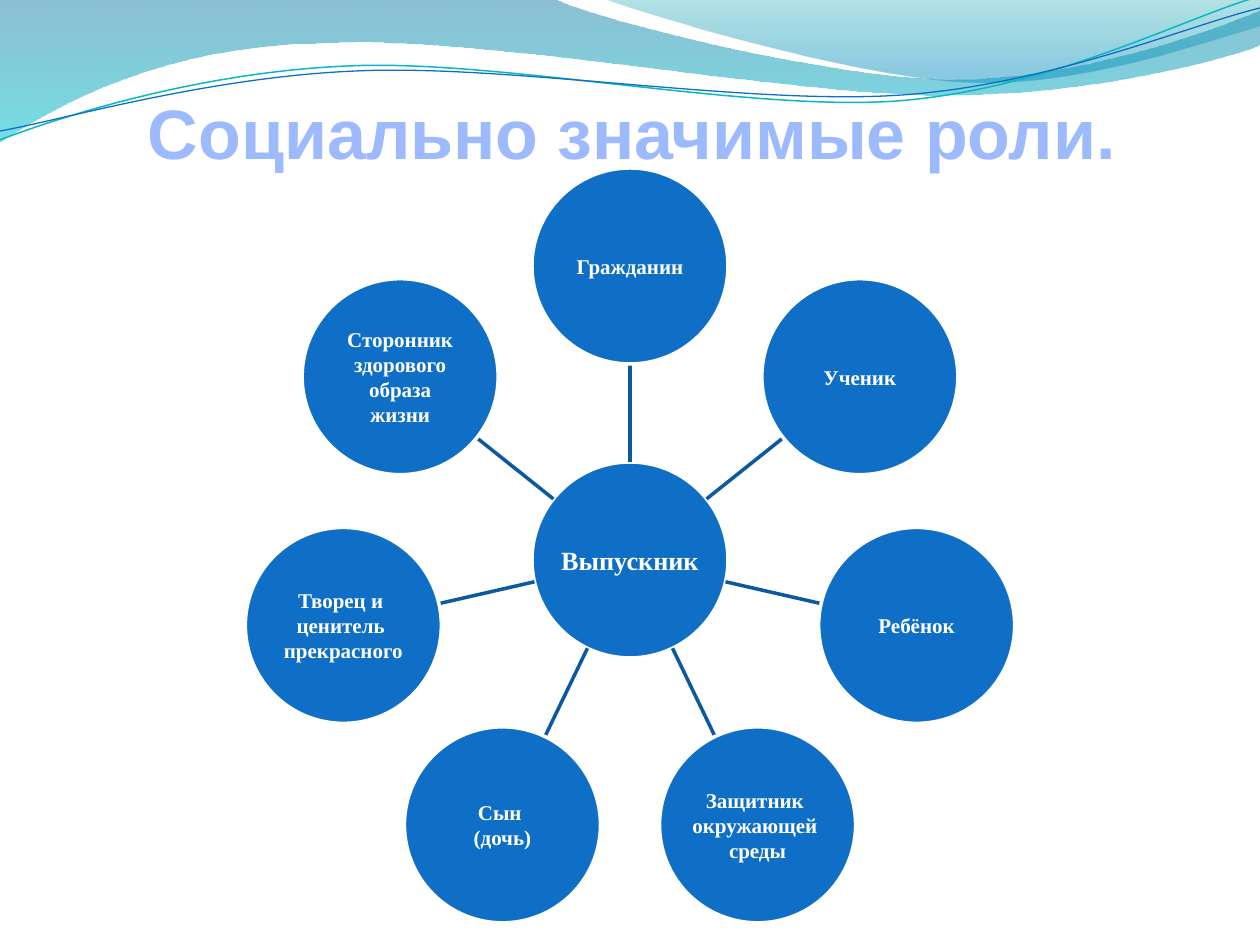
from math import cos, pi, radians, sin

from lxml.etree import SubElement
from pptx import Presentation
from pptx.dml.color import RGBColor
from pptx.enum.shapes import MSO_CONNECTOR, MSO_SHAPE
from pptx.enum.text import MSO_ANCHOR, PP_ALIGN
from pptx.oxml.ns import qn
from pptx.util import Emu, Pt

# Content
TITLE = "Социально значимые роли."
GRADUATE = ["Выпускник"]
ROLES = [  # clockwise from the top
    ["Гражданин"],
    ["Ученик"],
    ["Ребёнок"],
    ["Защитник ", "окружающей ", "среды"],
    ["Сын ", "(дочь)"],
    ["Творец и ", "ценитель ", "прекрасного"],
    ["Сторонник", "здорового", "образа", "жизни"],
]

# Waves in px: a pair is a straight line, six numbers are a Bezier curve
FILLED_WAVES = [
    dict(
        start=(0, 0),
        steps=[(554, -1), (600, 21, 837, 79, 955, 79), (1075, 79, 1207, 33, 1260, 11),
               (1261, 45), (1239, 55, 1096, 96, 940, 95), (784, 95, 481, 35, 324, 43),
               (163, 45, 58, 105, -1, 142)],
        stops=[(0, "0074A1", 45), (1, "00C6CF", 55)],
    ),
    dict(
        start=(604, -1),
        steps=[(641, 14, 859, 78, 969, 82), (1079, 87, 1211, 40, 1260, 26), (1260, 0)],
        stops=[(0, "00A1A9", 30), (0.8, "008BBF", 45)],
    ),
]
LINE_WAVES = [
    dict(
        start=(0, 140),
        steps=[(60, 117, 199, 72, 349, 66), (498, 59, 747, 112, 898, 101),
               (1050, 89, 1182, 19, 1257, -3)],
        line=("0AB8BF", 0.85), pivot=(629, 72), tilt=-2.7,
    ),
    dict(
        start=(0, 131),
        steps=[(59, 121, 207, 77, 357, 71), (508, 64, 752, 106, 903, 95),
               (1053, 84, 1186, 26, 1260, 8)],
        line=("0F6FC6", 0.75), pivot=(630, 74), tilt=-2.7,
    ),
]

# Layout in px
WIDTH, HEIGHT = 1260, 945
TITLE_BOX = (65, 76, 1134, 98)
CENTRE_X, CENTRE_Y = 630, 560
DIAMETER, RING_RADIUS = 196, 294

TITLE_FONT = dict(name="Arial", size=Pt(40), bold=True)
CENTRE_FONT = dict(name="Times New Roman", size=Pt(15), bold=True)
ROLE_FONT = dict(name="Times New Roman", size=Pt(12), bold=True)


def px(value):
    return Emu(round(value * 914400 / 126))


def colour(text):
    return RGBColor.from_string(text)


def set_line(shape, hex_colour, width):
    shape.line.color.rgb = colour(hex_colour)
    shape.line.width = Pt(width)


def write(shape, lines, font, hex_colour, anchor, insets):
    frame = shape.text_frame
    settings = dict(zip(("margin_left", "margin_top", "margin_right", "margin_bottom"),
                        map(px, insets)), vertical_anchor=anchor, word_wrap=False)
    for name, value in settings.items():
        setattr(frame, name, value)
    for index, text in enumerate(lines):
        para = frame.add_paragraph() if index else frame.paragraphs[0]
        para.alignment = PP_ALIGN.CENTER
        span = para.add_run()
        span.text = text
        for name, value in font.items():
            setattr(span.font, name, value)
        span.font.color.rgb = colour(hex_colour)


def turn(point, pivot, degrees):
    angle = radians(degrees)
    x, y = point[0] - pivot[0], point[1] - pivot[1]
    return (pivot[0] + x * cos(angle) - y * sin(angle),
            pivot[1] + x * sin(angle) + y * cos(angle))


def bend(wave, steps):
    """Turn each three segments that belong to a curve into one Bezier segment."""
    segments = iter(list(wave.element.iter(qn("a:lnTo"))))
    for step in steps:
        first = next(segments)
        if len(step) == 6:
            curve = first.makeelement(qn("a:cubicBezTo"))
            first.addprevious(curve)
            for segment in (first, next(segments), next(segments)):
                curve.append(segment[0])
                segment.getparent().remove(segment)


def add_wave(page, start, steps, stops=None, line=None, pivot=(0, 0), tilt=0):
    points = [start] + [step[i:i + 2] for step in steps for i in range(0, len(step), 2)]
    first, *others = [tuple(map(px, turn(point, pivot, -tilt))) for point in points]
    builder = page.shapes.build_freeform(*first, scale=1.0)
    builder.add_line_segments(others, close=stops is not None)
    wave = builder.convert_to_shape()
    bend(wave, steps)
    wave.rotation = tilt % 360
    wave.shadow.inherit = False
    if line:
        wave.fill.background()
        set_line(wave, *line)
        return
    wave.line.fill.background()
    wave.fill.gradient()
    wave.fill.gradient_angle = 270
    for stop, (position, hex_colour, _) in zip(wave.fill.gradient_stops, stops):
        stop.position = position
        stop.color.rgb = colour(hex_colour)
    for node, (_, _, opacity) in zip(wave.element.iter(qn("a:srgbClr")), stops):
        SubElement(node, qn("a:alpha")).set("val", str(opacity * 1000))


def add_circle(page, x, y, lines, font):
    circle = page.shapes.add_shape(MSO_SHAPE.OVAL, px(x - DIAMETER / 2), px(y - DIAMETER / 2),
                                   px(DIAMETER), px(DIAMETER))
    circle.shadow.inherit = False
    circle.fill.solid()
    circle.fill.fore_color.rgb = colour("0F6FC6")
    set_line(circle, "FFFFFF", 2)
    write(circle, lines, font, "FFFFFF", MSO_ANCHOR.MIDDLE, (1, 1, 1, 1))


def ring_point(angle, radius):
    return CENTRE_X + radius * sin(angle), CENTRE_Y - radius * cos(angle)


def add_spoke(page, angle):
    ends = [*ring_point(angle, DIAMETER / 2), *ring_point(angle, RING_RADIUS - DIAMETER / 2)]
    spoke = page.shapes.add_connector(MSO_CONNECTOR.STRAIGHT, *map(px, ends))
    set_line(spoke, "0C599F", 2)
    SubElement(spoke.element.spPr, qn("a:effectLst"))


def main():
    deck = Presentation()
    deck.slide_width, deck.slide_height = px(WIDTH), px(HEIGHT)
    page = deck.slides.add_slide(deck.slide_layouts[6])

    # Waves along the top
    for wave in FILLED_WAVES + LINE_WAVES:
        add_wave(page, **wave)

    # Title
    box = page.shapes.add_textbox(*map(px, TITLE_BOX))
    write(box, [TITLE], TITLE_FONT, "9EBAFF", MSO_ANCHOR.BOTTOM, (0, 6, 0, 0))

    # Graduate in the middle, roles evenly around
    add_circle(page, CENTRE_X, CENTRE_Y, GRADUATE, CENTRE_FONT)
    for index, role in enumerate(ROLES):
        angle = 2 * pi * index / len(ROLES)
        add_spoke(page, angle)
        add_circle(page, *ring_point(angle, RING_RADIUS), role, ROLE_FONT)

    deck.save("out.pptx")


if __name__ == "__main__":
    main()
